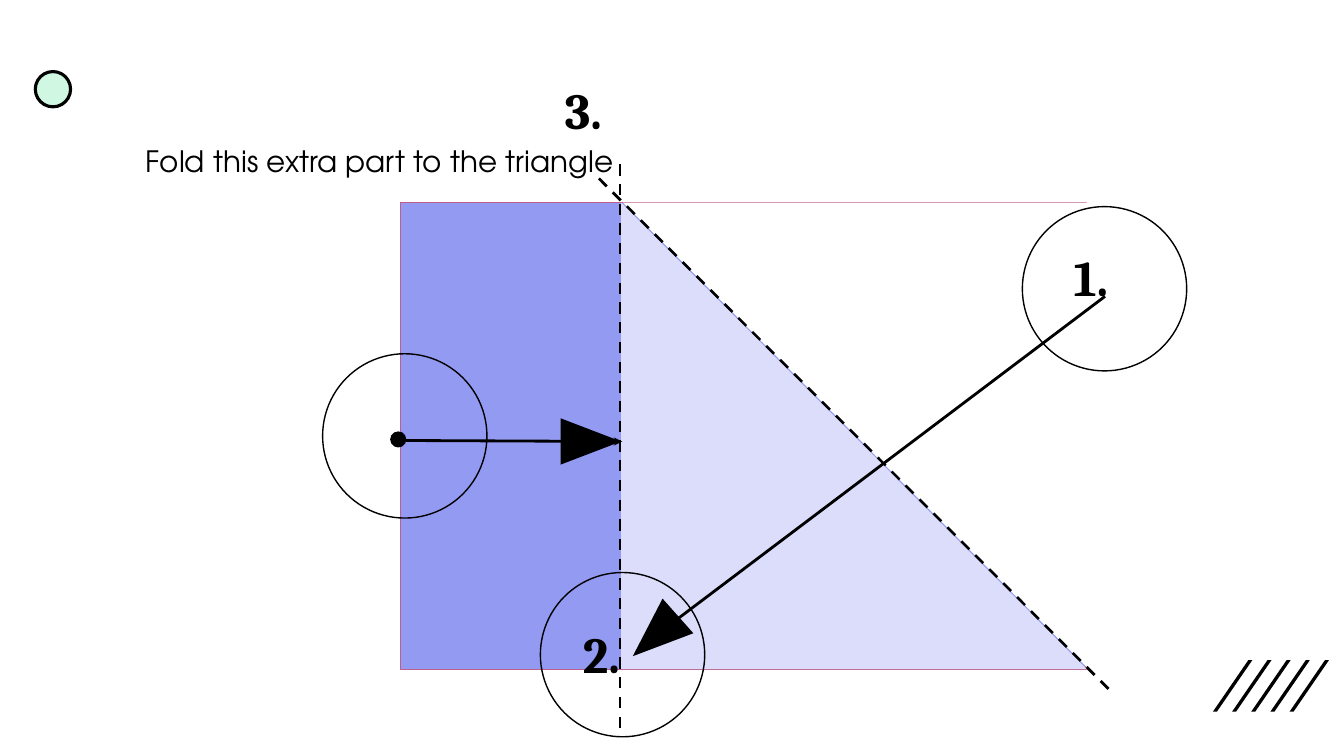
from lxml.etree import SubElement
from pptx import Presentation
from pptx.dml.color import RGBColor
from pptx.enum.dml import MSO_LINE
from pptx.enum.shapes import MSO_CONNECTOR, MSO_SHAPE
from pptx.enum.text import MSO_ANCHOR, PP_ALIGN
from pptx.oxml.ns import qn
from pptx.util import Inches, Pt

COLORS = {"ink": "000000", "paper": "FFFFFF", "mint": "CFF7E1",
          "extra": "939AF1", "edge": "BD5F8C", "fold": "DBDDFA"}
NUMBER = {"name": "Cambria", "size": Pt(36), "bold": True}
CAPTION = {"name": "TeX Gyre Adventor", "size": Pt(21), "bold": False}


def rgb(name):
    return RGBColor.from_string(COLORS[name])


class FoldSlide:
    def __init__(self, prs):
        self.s = prs.slides.add_slide(prs.slide_layouts[1])
        title = self.s.shapes.title.element
        title.getparent().remove(title)

    def paint(self, sp, fill=None, line=None, width=1):
        sp.shadow.inherit = False
        if fill:
            sp.fill.solid()
            sp.fill.fore_color.rgb = rgb(fill)
        else:
            sp.fill.background()
        if line:
            sp.line.color.rgb = rgb(line)
            sp.line.width = Pt(width)
        else:
            sp.line.fill.background()

    def shape(self, kind, box, fill=None, line=None, width=1, rotation=0):
        sp = self.s.shapes.add_shape(kind, *map(Inches, box))
        sp.rotation = rotation
        self.paint(sp, fill, line, width)

    def stripe(self, x, y, w, h, thick):
        fb = self.s.shapes.build_freeform(Inches(x), Inches(y + h))
        corners = [(x + thick, y + h), (x + w, y), (x + w - thick, y)]
        fb.add_line_segments([(Inches(a), Inches(b)) for a, b in corners])
        self.paint(fb.convert_to_shape(), "ink")

    def line(self, start, end, dashed=False, arrow=False):
        c = self.s.shapes.add_connector(
            MSO_CONNECTOR.STRAIGHT, *map(Inches, start + end))
        c.line.color.rgb = rgb("ink")
        c.line.width = Pt(2)
        if dashed:
            c.line.dash_style = MSO_LINE.DASH
        if arrow:
            ln = c.element.spPr.find(qn("a:ln"))
            SubElement(ln, qn("a:tailEnd"), type="stealth")
        SubElement(c.element.spPr, qn("a:effectLst"))

    def set_text(self, sp, runs, align=PP_ALIGN.LEFT, spacing=1.0):
        tf = sp.text_frame
        tf.word_wrap = True
        tf.vertical_anchor = MSO_ANCHOR.TOP
        p = tf.paragraphs[0]
        p.alignment, p.line_spacing, p.space_before = align, spacing, Pt(0)
        for i, (text, style) in enumerate(runs):
            if i:
                p.add_line_break()
            r = p.add_run()
            r.text = text
            for key, value in style.items():
                setattr(r.font, key, value)
            r.font.color.rgb = rgb("ink")
        return p

    def text(self, box, runs, **layout):
        sp = self.s.shapes.add_textbox(*map(Inches, box))
        self.set_text(sp, runs, **layout)

    def body(self, box, runs):
        sp = self.s.placeholders[1]
        sp.left, sp.top, sp.width, sp.height = map(Inches, box)
        # Bring the placeholder in front of the paper
        sp.element.getparent().append(sp.element)
        pPr = self.set_text(sp, runs)._p.get_or_add_pPr()
        pPr.set("marL", "0")
        pPr.set("indent", "0")
        SubElement(pPr, qn("a:buNone"))


def main():
    prs = Presentation()
    prs.slide_width, prs.slide_height = Inches(13.33), Inches(7.5)
    fold = FoldSlide(prs)
    ring = 1.63

    # Corner decorations
    for i in range(5):
        fold.stripe(12.03 + 0.19 * i, 6.55, 0.39, 0.51, 0.04)
    fold.shape(MSO_SHAPE.OVAL, (0.35, 0.71, 0.35, 0.35), "mint", "ink", 2.25)

    # Paper with its fold lines
    fold.shape(MSO_SHAPE.RECTANGLE, (3.97, 2.01, 6.8, 4.63), "extra", "edge")
    fold.line((6.15, 1.63), (6.15, 7.25), dashed=True)
    fold.shape(MSO_SHAPE.RIGHT_TRIANGLE, (6.18, 2.01, 4.62, 4.63), "paper",
               rotation=180)
    fold.line((5.94, 1.77), (11.04, 6.88), dashed=True)
    fold.shape(MSO_SHAPE.RIGHT_TRIANGLE, (6.16, 2.01, 4.62, 4.63), "fold")

    # Rings around the corners and the side
    for x, y in [(5.36, 5.68), (10.14, 2.05), (3.2, 3.51)]:
        fold.shape(MSO_SHAPE.OVAL, (x, y, ring, ring), line="ink")

    # Step labels
    fold.body((5.68, 6.13, 2.43, 1.07), [("2.", NUMBER)])
    fold.text((10.55, 2.39, 1.96, 0.71), [("1.", NUMBER)])
    fold.text((0.91, 0.68, 5.27, 1.33),
              [("3. ", NUMBER), ("Fold this extra part to the triangle", CAPTION)],
              align=PP_ALIGN.RIGHT, spacing=1.1)

    # Fold arrows with large heads
    for start, end, (x, y), angle in [
            ((10.96, 2.94), (6.35, 6.42), (6.27, 6.01), 228.3),
            ((3.95, 4.37), (6.17, 4.38), (5.63, 4.08), 90)]:
        fold.line(start, end, arrow=True)
        fold.shape(MSO_SHAPE.ISOSCELES_TRIANGLE, (x, y, 0.46, 0.6), "ink",
                   rotation=angle)
    fold.shape(MSO_SHAPE.OVAL, (3.87, 4.28, 0.16, 0.16), "ink")

    prs.save("out.pptx")


if __name__ == "__main__":
    main()
